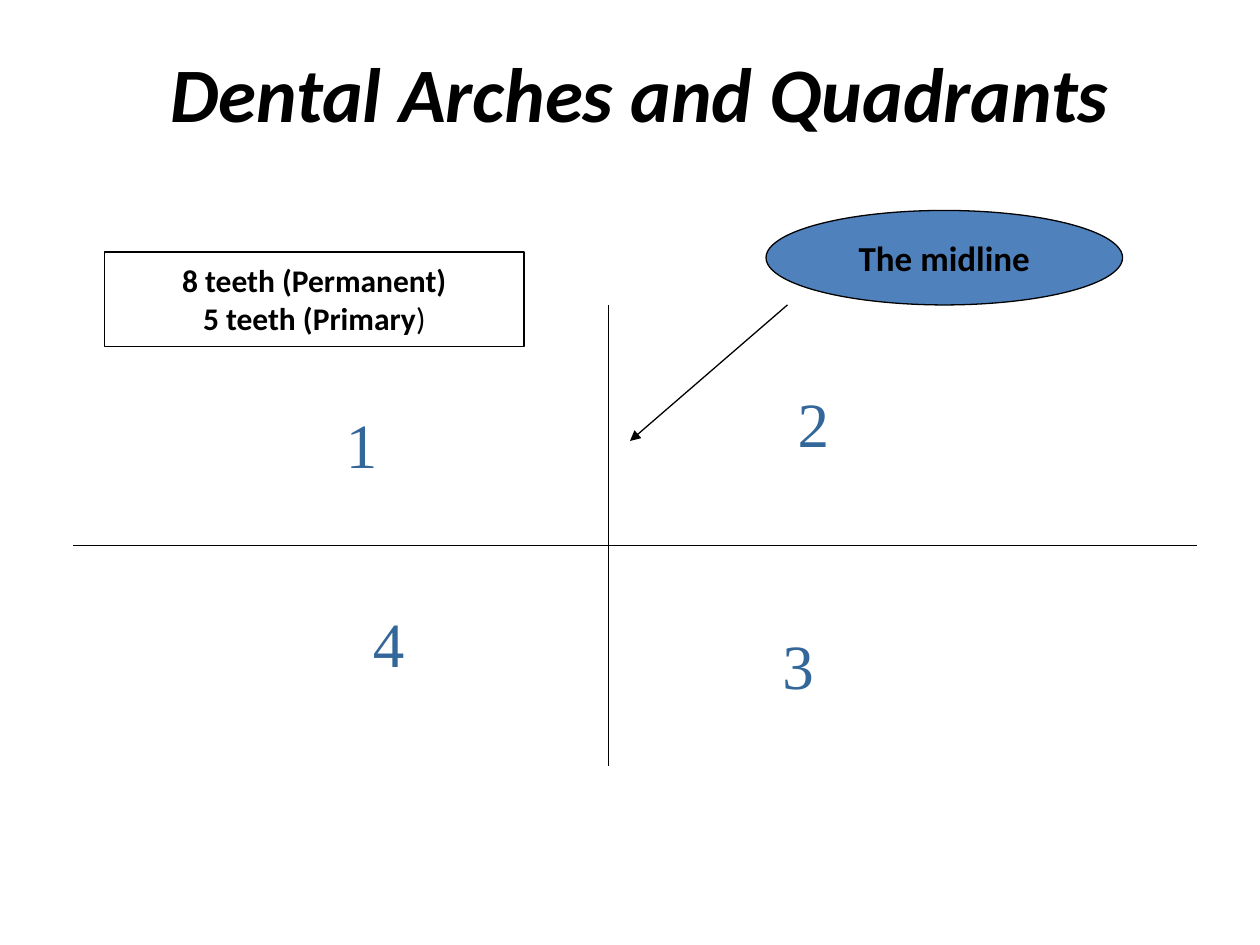
from dataclasses import dataclass

from lxml import etree
from pptx import Presentation
from pptx import util as u
from pptx.dml.color import RGBColor
from pptx.enum import shapes, text
from pptx.oxml import ns


@dataclass(frozen=True)
class Theme:
    """Colours, fonts and type sizes of the slide."""
    ink: str = "000000"
    paper: str = "FFFFFF"
    callout: str = "4F81BD"
    digit: str = "336699"
    body_font: str = "Calibri"
    digit_font: str = "Times New Roman"
    title_size: int = 44
    digit_size: int = 36
    callout_size: int = 20
    count_size: int = 18
    line_width: float = 0.75


class ArchSlide:
    """Draws styled elements on the current slide."""

    def __init__(self, slide, theme):
        self.slide = slide
        self.theme = theme

    def set_text(self, frame, paragraphs, size, font, color, wrap=False,
                 anchor=text.MSO_ANCHOR.MIDDLE, italic=False):
        """Fill a frame with centred paragraphs of (wording, bold) runs."""
        frame.word_wrap = wrap
        frame.auto_size = text.MSO_AUTO_SIZE.NONE
        frame.vertical_anchor = anchor
        for index, runs in enumerate(paragraphs):
            paragraph = frame.add_paragraph() if index else frame.paragraphs[0]
            paragraph.alignment = text.PP_ALIGN.CENTER
            for wording, bold in runs:
                run = paragraph.add_run()
                run.text = wording
                run.font.name = font
                run.font.size = u.Pt(size)
                run.font.bold = bold
                run.font.italic = italic
                run.font.color.rgb = RGBColor.from_string(color)

    def outline(self, line):
        """Give a line the common colour and width."""
        line.color.rgb = RGBColor.from_string(self.theme.ink)
        line.width = u.Pt(self.theme.line_width)

    def title(self, wording, box):
        """Place and format the title placeholder."""
        heading = self.slide.shapes.title
        heading.left, heading.top, heading.width, heading.height = map(u.Inches, box)
        self.set_text(heading.text_frame, [[(wording, True)]], self.theme.title_size,
                      self.theme.body_font, self.theme.ink, wrap=True, italic=True)

    def line(self, start, end, arrow=False):
        """Draw a straight line, with an arrowhead at its end if asked."""
        stroke = self.slide.shapes.add_connector(
            shapes.MSO_CONNECTOR.STRAIGHT, *map(u.Inches, start + end))
        self.outline(stroke.line)
        properties = stroke._element.spPr
        if arrow:
            etree.SubElement(properties.find(ns.qn("a:ln")), ns.qn("a:tailEnd"), type="triangle")
        etree.SubElement(properties, ns.qn("a:effectLst"))

    def label(self, kind, box, fill, paragraphs, size):
        """Draw an outlined shape with text inside."""
        frame = self.slide.shapes.add_shape(kind, *map(u.Inches, box))
        frame.shadow.inherit = False
        frame.fill.solid()
        frame.fill.fore_color.rgb = RGBColor.from_string(fill)
        self.outline(frame.line)
        self.set_text(frame.text_frame, paragraphs, size, self.theme.body_font, self.theme.ink)

    def digit(self, number, box):
        """Add a quadrant number."""
        quadrant = self.slide.shapes.add_textbox(*map(u.Inches, box))
        self.set_text(quadrant.text_frame, [[(number, False)]], self.theme.digit_size,
                      self.theme.digit_font, self.theme.digit, anchor=text.MSO_ANCHOR.TOP)


def main():
    """Build the slide and save it."""
    deck = Presentation()
    deck.slide_width, deck.slide_height = u.Inches(10), u.Inches(7.5)
    theme = Theme()
    arches = ArchSlide(deck.slides.add_slide(deck.slide_layouts.get_by_name("Title Only")), theme)

    arches.title("Dental Arches and Quadrants", (0.58, 0.25, 9, 0.95))

    midline, arch_divide = 4.83, 4.33
    arches.line((midline, 2.42), (midline, 6.08))
    arches.line((0.58, arch_divide), (9.5, arch_divide))
    arches.line((6.25, 2.42), (5, 3.5), arrow=True)
    arches.label(shapes.MSO_SHAPE.OVAL, (6.08, 1.67, 2.83, 0.75), theme.callout,
                 [[("The midline", True)]], theme.callout_size)

    quadrants = {
        "1": (2.58, 3.17, 0.58, 0.66),
        "2": (6.08, 3, 0.75, 0.82),
        "3": (6, 4.92, 0.67, 0.74),
        "4": (2.75, 4.75, 0.67, 0.74),
    }
    for number, box in quadrants.items():
        arches.digit(number, box)

    tooth_counts = [
        [("8 teeth (Permanent)", True)],
        [("5 teeth (Primary", True), (")", False)],
    ]
    arches.label(shapes.MSO_SHAPE.RECTANGLE, (0.83, 2, 3.33, 0.75), theme.paper,
                 tooth_counts, theme.count_size)

    deck.save("out.pptx")


if __name__ == "__main__":
    main()
